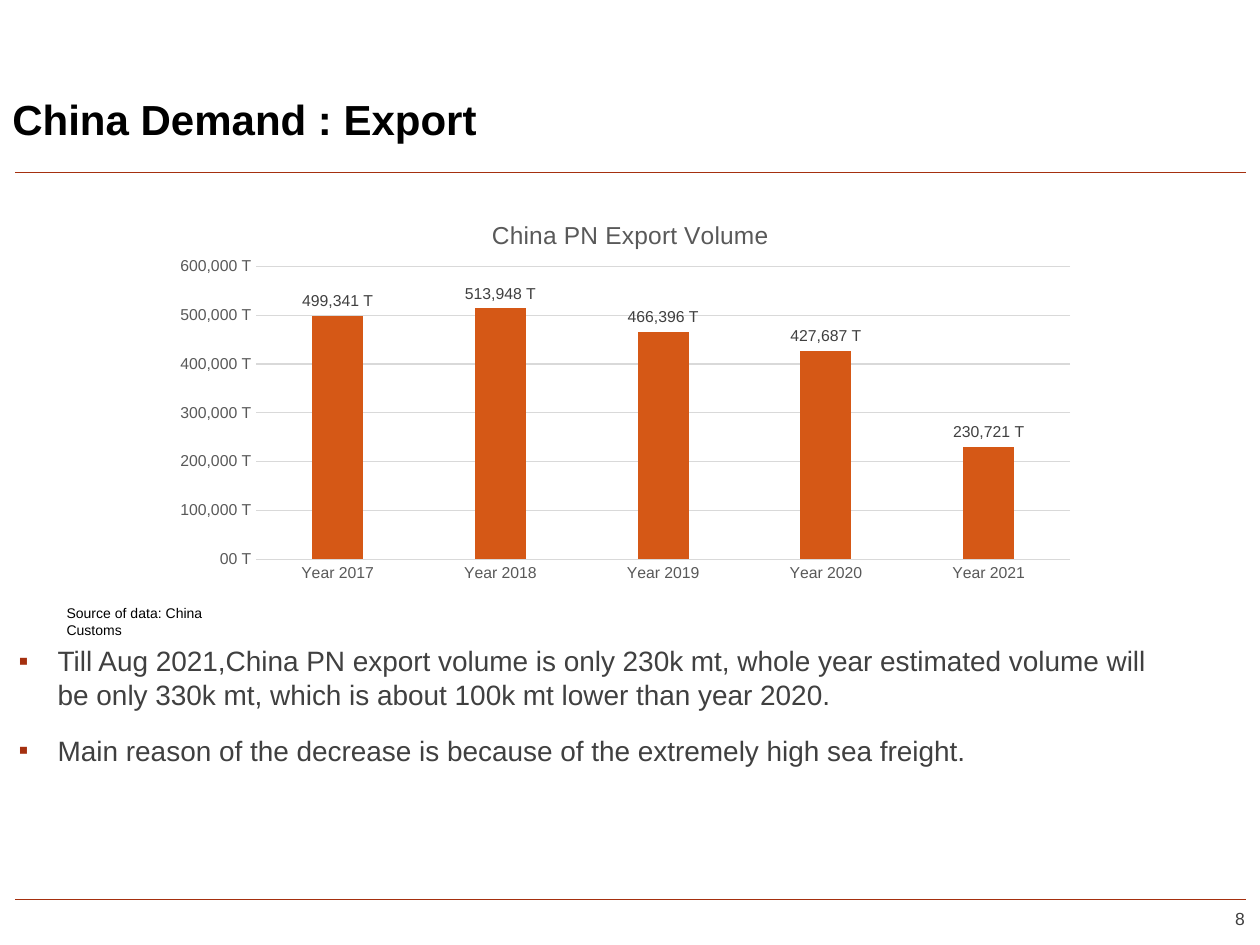
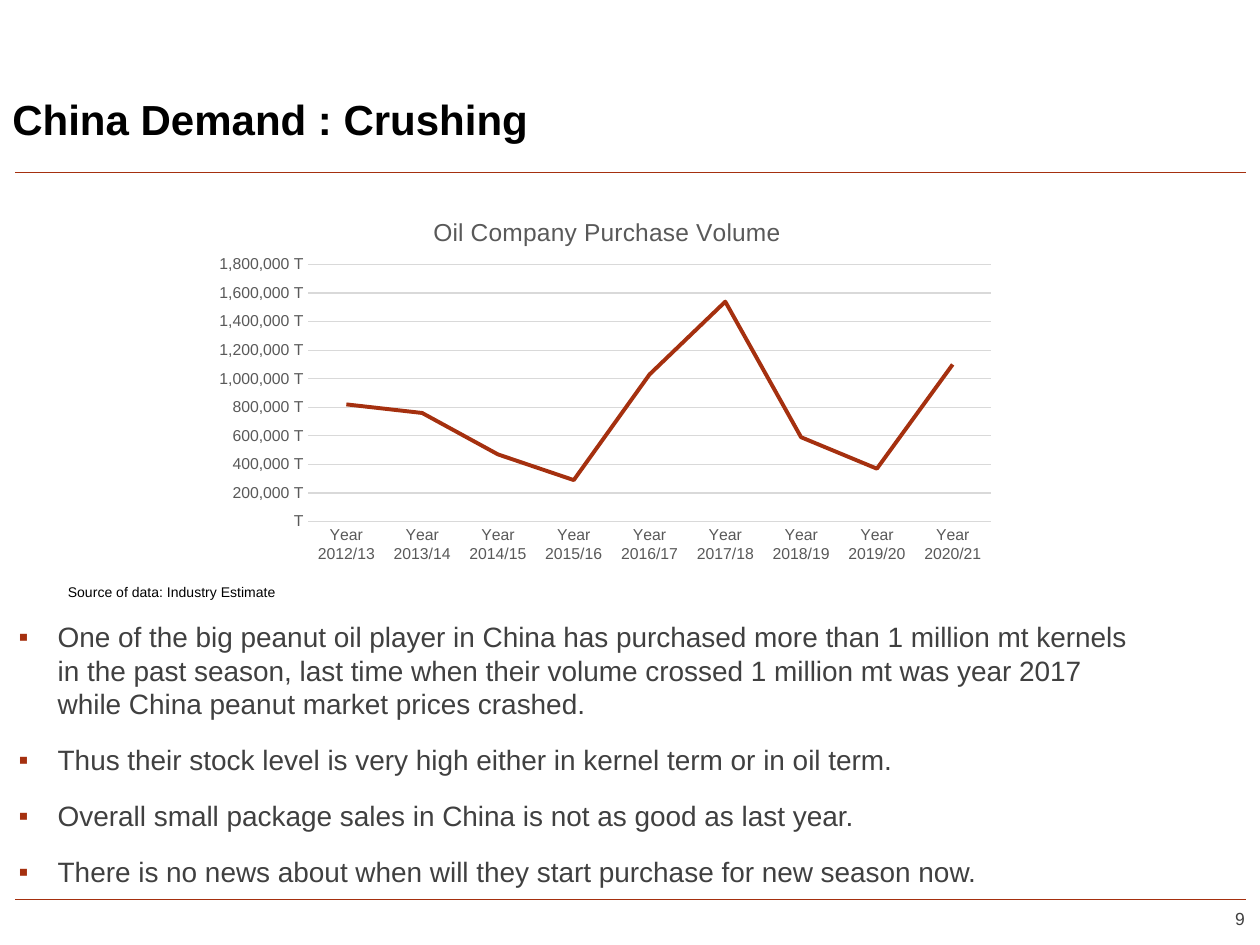
"""Build two slides on China peanut demand: export and crushing."""
from dataclasses import dataclass

import lxml.etree
import pptx
import pptx.chart.data
import pptx.dml.color
import pptx.enum.chart
import pptx.enum.shapes
import pptx.enum.text
import pptx.oxml
import pptx.oxml.ns
import pptx.util

COLUMNS, ROWS = 100, 75
WIDTH, HEIGHT = pptx.util.Inches(10), pptx.util.Inches(7.5)


@dataclass(frozen=True)
class Theme:
    """Colours, font and type sizes of the deck."""

    font: str = "Arial"
    black: str = "000000"
    body: str = "404040"
    muted: str = "595959"
    grid: str = "D9D9D9"
    accent: str = "A5300F"
    orange: str = "D55816"
    heading_size: float = 24
    body_size: float = 16
    chart_title_size: float = 14
    number_size: float = 10
    label_size: float = 9
    source_size: float = 8
    bullet_gap: float = 12.8
    thin: float = 0.75
    rule: float = 1
    trend: float = 2.25


THEME = Theme()


@dataclass(frozen=True)
class Area:
    """A rectangle in grid columns and rows."""

    left: float
    top: float
    width: float
    height: float

    def place(self) -> tuple[int, int, int, int]:
        """Return left, top, width and height as slide lengths."""
        return (across(self.left), down(self.top), across(self.width), down(self.height))


@dataclass(frozen=True)
class VolumeChart:
    """A chart of yearly volumes; layouts are shares of the chart."""

    title: str
    kind: pptx.enum.chart.XL_CHART_TYPE
    area: Area
    plot_area: Area
    title_at: tuple[float, float]
    volumes: dict[str, int]
    number_format: str
    top_value: int
    step: int


@dataclass(frozen=True)
class DemandPage:
    """The content of one demand slide."""

    number: int
    heading: str
    chart: VolumeChart
    source: str
    source_area: Area
    bullets: tuple[str, ...]
    bullets_area: Area


PAGES = (
    DemandPage(
        8,
        "China Demand : Export",
        VolumeChart(
            "China PN Export Volume",
            pptx.enum.chart.XL_CHART_TYPE.COLUMN_CLUSTERED,
            Area(13, 15.5, 73.4, 31.4),
            Area(0.1, 0.18, 0.88, 0.74),
            (0.35, 0.05),
            {
                "Year 2017": 499341,
                "Year 2018": 513948,
                "Year 2019": 466396,
                "Year 2020": 427687,
                "Year 2021": 230721,
            },
            '#,#00\\ "T"',
            600000,
            100000,
        ),
        "Source of data: China Customs",
        Area(4.3, 47.5, 17, 2.3),
        (
            "Till Aug 2021,China PN export volume is only 230k mt, whole year estimated "
            "volume will be only 330k mt, which is about 100k mt lower than year 2020.",
            "Main reason of the decrease is because of the extremely high sea freight.",
        ),
        Area(0, 50.6, 92, 17.8),
    ),
    DemandPage(
        9,
        "China Demand : Crushing",
        VolumeChart(
            "Oil Company Purchase Volume",
            pptx.enum.chart.XL_CHART_TYPE.LINE,
            Area(16.2, 15.3, 63.7, 30),
            Area(0.13, 0.19, 0.85, 0.68),
            (0.28, 0.05),
            {
                "Year 2012/13": 820000,
                "Year 2013/14": 760000,
                "Year 2014/15": 470000,
                "Year 2015/16": 290000,
                "Year 2016/17": 1030000,
                "Year 2017/18": 1540000,
                "Year 2018/19": 590000,
                "Year 2019/20": 370000,
                "Year 2020/21": 1100000,
            },
            '#,###\\ "T"',
            1800000,
            200000,
        ),
        "Source of data: Industry Estimate",
        Area(4.4, 45.8, 19.5, 2.4),
        (
            "One of the big peanut oil player in China has purchased more than 1 million mt "
            "kernels in the past season, last time when their volume crossed 1 million mt "
            "was year 2017 while China peanut market prices crashed.",
            "Thus their stock level is very high either in kernel term or in oil term.",
            "Overall small package sales in China is not as good as last year.",
            "There is no news about when will they start purchase for new season now.",
        ),
        Area(0, 48.7, 92, 29.5),
    ),
)


def across(columns: float) -> int:
    """Convert grid columns to a length."""
    return round(columns * WIDTH / COLUMNS)


def down(rows: float) -> int:
    """Convert grid rows to a length."""
    return round(rows * HEIGHT / ROWS)


def rgb(value: str) -> pptx.dml.color.RGBColor:
    """Convert a hex string to a colour."""
    return pptx.dml.color.RGBColor.from_string(value)


def style_font(font, size: float, color: str, bold: bool = False) -> None:
    """Set the face, size, colour and weight of a font."""
    font.name, font.size, font.bold = THEME.font, pptx.util.Pt(size), bold
    font.color.rgb = rgb(color)


def style_line(line, color: str, width: float) -> None:
    """Set the colour and width of a line."""
    line.color.rgb, line.width = rgb(color), pptx.util.Pt(width)


def add_bullet(para) -> None:
    """Give a paragraph a hanging square bullet."""
    props = para._p.get_or_add_pPr()
    props.set("marL", str(across(3.6)))
    props.set("indent", str(across(-3.1)))
    color = lxml.etree.SubElement(props, pptx.oxml.ns.qn("a:buClr"))
    lxml.etree.SubElement(color, pptx.oxml.ns.qn("a:srgbClr"), val=THEME.accent)
    lxml.etree.SubElement(props, pptx.oxml.ns.qn("a:buFont"), typeface=THEME.font)
    lxml.etree.SubElement(props, pptx.oxml.ns.qn("a:buChar"), char="▪")


def add_text(page, area: Area, *texts: str, size: float, color: str, bold: bool = False,
             bulleted: bool = False):
    """Add a wrapping text box with one paragraph for each text."""
    box = page.shapes.add_textbox(*area.place())
    frame = box.text_frame
    frame.word_wrap = True
    for index, text in enumerate(texts):
        para = frame.add_paragraph() if index else frame.paragraphs[0]
        if bulleted:
            add_bullet(para)
        if index:
            para.space_before = pptx.util.Pt(THEME.bullet_gap)
        span = para.add_run()
        span.text = text
        style_font(span.font, size, color, bold)
    return frame


def add_rule(page, row: float) -> None:
    """Draw a horizontal rule across the slide."""
    rule = page.shapes.add_connector(
        pptx.enum.shapes.MSO_CONNECTOR.STRAIGHT, across(1.2), down(row), across(98.9), down(row))
    style_line(rule.line, THEME.accent, THEME.rule)
    lxml.etree.SubElement(rule._element.spPr, pptx.oxml.ns.qn("a:effectLst"))


def add_page_number(page, number: int) -> None:
    """Write the page number at the lower right."""
    frame = add_text(page, Area(94.1, 70.5, 4.7, 4), str(number),
                     size=THEME.number_size, color=THEME.body)
    frame.margin_right = 0
    frame.vertical_anchor = pptx.enum.text.MSO_ANCHOR.MIDDLE
    frame.paragraphs[0].alignment = pptx.enum.text.PP_ALIGN.RIGHT
    frame.paragraphs[0].line_spacing = 1.5


def set_layout(parent, **shares: float | str) -> None:
    """Fix the place of a chart part by shares of the chart."""
    for old in parent.findall(pptx.oxml.ns.qn("c:layout")):
        parent.remove(old)
    layout = pptx.oxml.parse_xml(f"<c:layout {pptx.oxml.ns.nsdecls('c')}/>")
    manual = lxml.etree.SubElement(layout, pptx.oxml.ns.qn("c:manualLayout"))
    for name, value in shares.items():
        lxml.etree.SubElement(manual, pptx.oxml.ns.qn(f"c:{name}"), val=str(value))
    text = parent.find(pptx.oxml.ns.qn("c:tx"))
    parent.insert(0 if text is None else 1, layout)


def style_axes(chart, spec: VolumeChart) -> None:
    """Format both axes and the gridlines."""
    for axis in (chart.category_axis, chart.value_axis):
        axis.major_tick_mark = axis.minor_tick_mark = pptx.enum.chart.XL_TICK_MARK.NONE
        style_font(axis.tick_labels.font, THEME.label_size, THEME.muted)
    style_line(chart.category_axis.format.line, THEME.grid, THEME.thin)
    values = chart.value_axis
    values.format.line.fill.background()
    values.minimum_scale, values.maximum_scale = 0, spec.top_value
    values.major_unit = spec.step
    values.has_major_gridlines = True
    style_line(values.major_gridlines.format.line, THEME.grid, THEME.thin)
    values.tick_labels.number_format = spec.number_format
    values.tick_labels.number_format_is_linked = False


def style_series(plot, spec: VolumeChart) -> None:
    """Format the series as labelled columns or as a plain line."""
    plot.vary_by_categories = False
    series = plot.series[0]
    if spec.kind == pptx.enum.chart.XL_CHART_TYPE.LINE:
        series.smooth = False
        series.marker.style = pptx.enum.chart.XL_MARKER_STYLE.NONE
        style_line(series.format.line, THEME.accent, THEME.trend)
        return
    plot.gap_width, plot.overlap = 219, -27
    series.format.fill.solid()
    series.format.fill.fore_color.rgb = rgb(THEME.orange)
    labels = series.data_labels
    labels.show_value = True
    labels.position = pptx.enum.chart.XL_LABEL_POSITION.OUTSIDE_END
    labels.number_format, labels.number_format_is_linked = spec.number_format, False
    style_font(labels.font, THEME.label_size, THEME.body)


def add_volume_chart(page, spec: VolumeChart) -> None:
    """Add the chart with its title, axes and series."""
    data = pptx.chart.data.CategoryChartData()
    data.categories = list(spec.volumes)
    data.add_series("Series 1", list(spec.volumes.values()))
    chart = page.shapes.add_chart(spec.kind, *spec.area.place(), data).chart
    chart.has_legend = False
    style_font(chart.font, THEME.number_size, THEME.black)
    chart.has_title = True
    title = chart.chart_title
    title.text_frame.text = spec.title
    style_font(title.text_frame.paragraphs[0].runs[0].font, THEME.chart_title_size, THEME.muted)
    title.include_in_layout = False
    left, top = spec.title_at
    set_layout(title._element, xMode="edge", yMode="edge", x=left, y=top)
    plot_area = spec.plot_area
    set_layout(chart._chartSpace.chart.plotArea, layoutTarget="inner", xMode="edge",
               yMode="edge", x=plot_area.left, y=plot_area.top,
               w=plot_area.width, h=plot_area.height)
    style_axes(chart, spec)
    style_series(chart.plots[0], spec)


def add_demand_page(deck, content: DemandPage) -> None:
    """Add one demand slide to the deck."""
    page = deck.slides.add_slide(deck.slide_layouts[6])
    for row in (13.7, 71.4):
        add_rule(page, row)
    add_page_number(page, content.number)
    add_text(page, content.source_area, content.source,
             size=THEME.source_size, color=THEME.black)
    add_text(page, content.bullets_area, *content.bullets,
             size=THEME.body_size, color=THEME.body, bulleted=True)
    add_text(page, Area(0, 6.9, 44, 5), content.heading,
             size=THEME.heading_size, color=THEME.black, bold=True)
    add_volume_chart(page, content.chart)


def main() -> None:
    """Build and save the deck."""
    deck = pptx.Presentation()
    deck.slide_width, deck.slide_height = WIDTH, HEIGHT
    for content in PAGES:
        add_demand_page(deck, content)
    deck.save("out.pptx")


if __name__ == "__main__":
    main()
